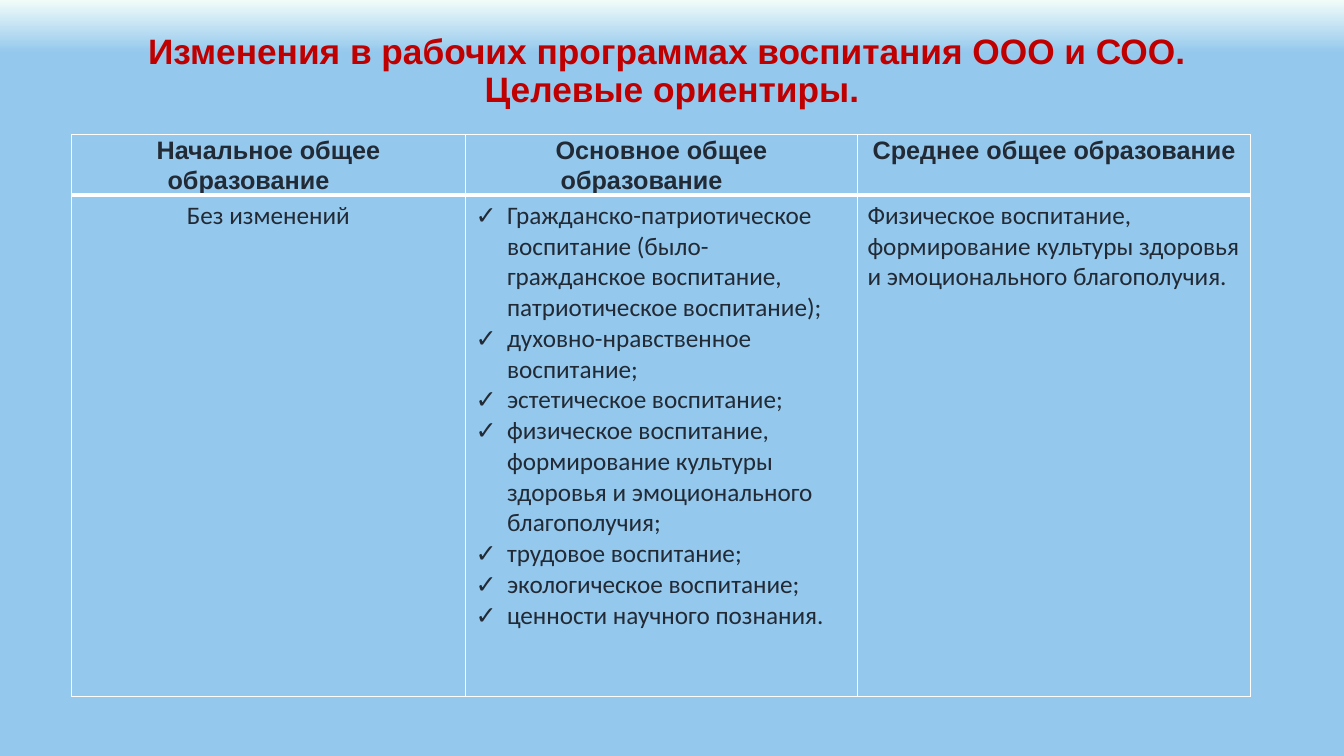
from lxml.etree import SubElement
from pptx import Presentation
from pptx.dml.color import RGBColor
from pptx.enum.text import MSO_ANCHOR as Anchor, MSO_AUTO_SIZE as AutoSize, PP_ALIGN as Align
from pptx.oxml.ns import qn
from pptx.util import Pt

SKY, MINT, WHITE, RED, INK = "94C8ED", "F1FCF9", "FFFFFF", "C00000", "222A35"
COLUMN_WIDTHS = (281.5, 280, 281)
ROW_HEIGHTS = (43.5, 358)
HEADERS = (
    "Начальное общее образование\t",
    "Основное общее образование\t",
    "Среднее общее образование",
)
GOALS = (
    "Гражданско-патриотическое воспитание (было-гражданское воспитание, патриотическое воспитание);",
    "духовно-нравственное воспитание;",
    "эстетическое воспитание;",
    "физическое воспитание, формирование культуры здоровья и эмоционального благополучия;",
    "трудовое воспитание;",
    "экологическое воспитание;",
    "ценности научного познания.",
)
PHYSICAL = "Физическое воспитание, формирование культуры здоровья и эмоционального благополучия."


def color(value):
    return RGBColor.from_string(value)


def format_para(para, size, font, ink, bold=False, align=Align.LEFT, spacing=1.0):
    para.alignment = align
    para.line_spacing = spacing
    for span in para.runs:
        span.font.size = Pt(size)
        span.font.name = font
        span.font.bold = bold
        span.font.color.rgb = color(ink)


def paint_background(page):
    fill = page.background.fill
    fill.gradient()
    fill.gradient_angle = 270
    for stop, position, shade in zip(fill.gradient_stops, (0, 0.07), (MINT, SKY)):
        stop.position = position
        stop.color.rgb = color(shade)


def add_title(page, text):
    title = page.shapes.title
    title.left, title.top, title.width, title.height = Pt(66), Pt(29), Pt(828), Pt(45)
    frame = title.text_frame
    frame.text = text
    frame.auto_size = AutoSize.NONE
    frame.vertical_anchor = Anchor.MIDDLE
    format_para(frame.paragraphs[0], 25.2, "Arial", RED, True, Align.CENTER, 0.9)


def set_borders(cell, top, bottom):
    properties = cell._tc.get_or_add_tcPr()
    sides = (("lnL", 1), ("lnR", 1), ("lnT", top), ("lnB", bottom))
    for index, (side, width) in enumerate(sides):
        line = SubElement(properties, qn(f"a:{side}"), w=str(Pt(width)))
        solid = SubElement(line, qn("a:solidFill"))
        SubElement(solid, qn("a:srgbClr"), val=WHITE)
        properties.remove(line)
        properties.insert(index, line)


def add_check(para):
    properties = para._p.get_or_add_pPr()
    properties.set("marL", str(Pt(22.5)))
    properties.set("indent", str(Pt(-22.5)))
    SubElement(properties, qn("a:buFont"), typeface="Calibri")
    SubElement(properties, qn("a:buChar"), char="✓")


def fill_cell(cell, lines, header=False, align=Align.LEFT, checked=False):
    cell.fill.solid()
    cell.fill.fore_color.rgb = color(SKY)
    set_borders(cell, 1 if header else 3, 3 if header else 1)
    if header:
        cell.margin_left = cell.margin_right = Pt(5)
        cell.margin_top = cell.margin_bottom = Pt(0)
    cell.text_frame.text = "\n".join(lines)
    for para in cell.text_frame.paragraphs:
        format_para(para, 18, "Arial" if header else "Calibri", INK, header,
                    align, 1.07 if header else 1.0)
        if checked:
            add_check(para)


def add_goal_table(page):
    table = page.shapes.add_table(
        2, len(HEADERS), Pt(51), Pt(96), Pt(sum(COLUMN_WIDTHS)), Pt(sum(ROW_HEIGHTS))
    ).table
    for column, width in zip(table.columns, COLUMN_WIDTHS):
        column.width = Pt(width)
    for row, height in zip(table.rows, ROW_HEIGHTS):
        row.height = Pt(height)
    for index, header in enumerate(HEADERS):
        fill_cell(table.cell(0, index), [header], header=True, align=Align.CENTER)
    fill_cell(table.cell(1, 0), ["Без изменений"], align=Align.CENTER)
    fill_cell(table.cell(1, 1), GOALS, checked=True)
    fill_cell(table.cell(1, 2), [PHYSICAL])


def main():
    deck = Presentation()
    deck.slide_width, deck.slide_height = Pt(960), Pt(540)
    page = deck.slides.add_slide(deck.slide_layouts[5])
    paint_background(page)
    add_title(page, "Изменения в рабочих программах воспитания ООО и СОО. \vЦелевые ориентиры.")
    add_goal_table(page)
    deck.save("out.pptx")


if __name__ == "__main__":
    main()
